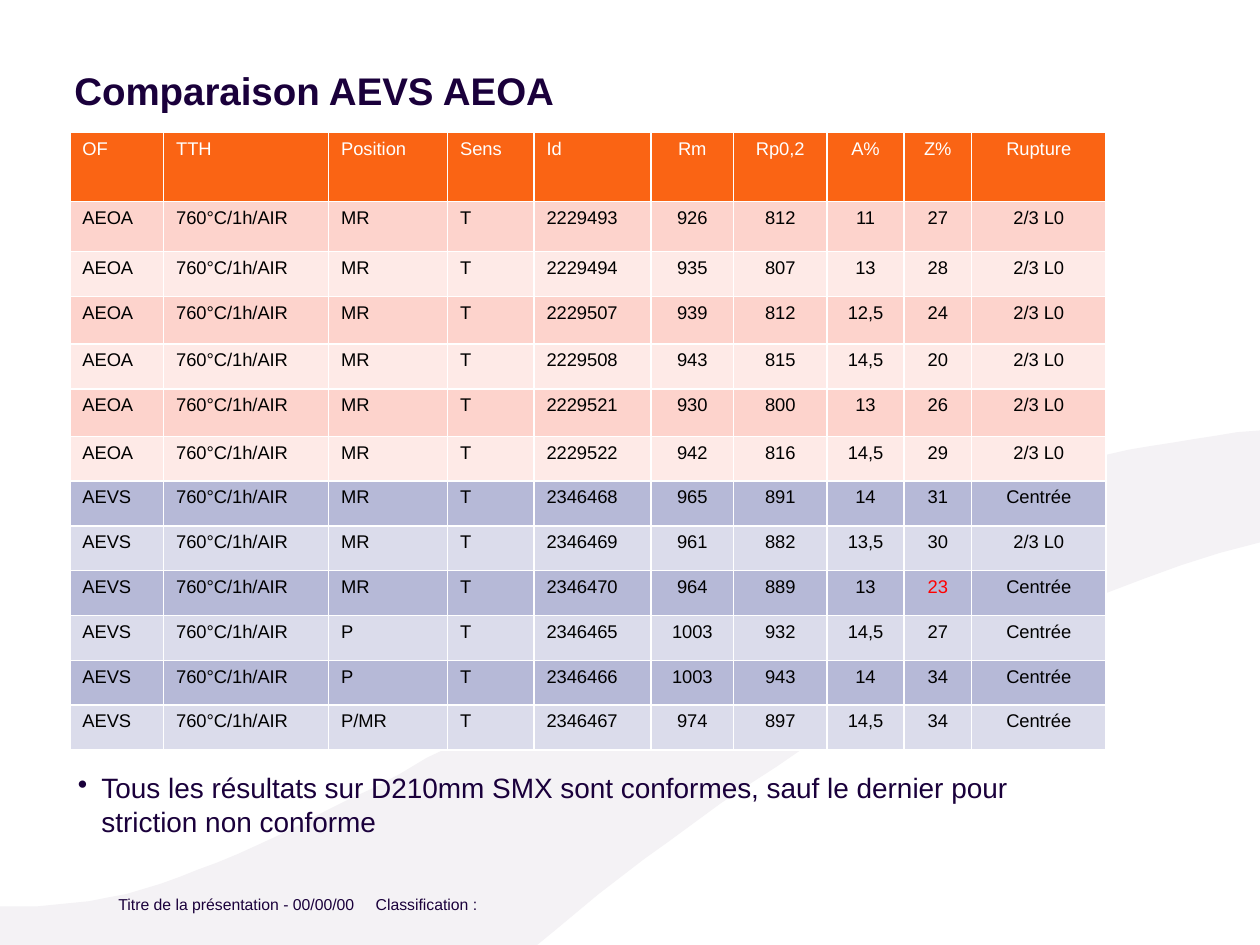
from lxml import etree
from pptx import Presentation
from pptx import util as u
from pptx.dml.color import RGBColor
from pptx.enum import text
from pptx.oxml import ns

Pt = u.Pt
DARK = "1A003B"


def color(value):
    return RGBColor.from_string(value)


def add_text(slide, left, top, width, height, content, size, anchor, margins=(0, 0)):
    """Add a wrapped text box; return its paragraph."""
    shape = slide.shapes.add_textbox(Pt(left), Pt(top), Pt(width), Pt(height))
    frame = shape.text_frame
    frame.word_wrap = True
    frame.vertical_anchor = anchor
    frame.margin_left = frame.margin_right = Pt(margins[0])
    frame.margin_top = frame.margin_bottom = Pt(margins[1])
    paragraph = frame.paragraphs[0]
    paragraph.text = content
    properties = paragraph._p.get_or_add_pPr()
    if content.startswith("Tous"):
        properties.set("marL", str(Pt(13.5)))
        properties.set("indent", str(-Pt(13.5)))
        etree.SubElement(properties, ns.qn("a:buChar")).set("char", "•")
    if "\t" in content:
        tabs = etree.SubElement(properties, ns.qn("a:tabLst"))
        tab = etree.SubElement(tabs, ns.qn("a:tab"))
        tab.set("pos", str(Pt(147)))
        tab.set("algn", "l")
    paragraph.font.name = "Arial"
    paragraph.font.size = Pt(size)
    paragraph.font.color.rgb = color(DARK)
    return paragraph


presentation = Presentation()
presentation.slide_width, presentation.slide_height = Pt(720), Pt(540)
slide = presentation.slides.add_slide(presentation.slide_layouts[6])

# Background wave: Bézier curves sampled into short segments
upper_left = [[(422, 338.4), (374.4, 363.6), (333.4, 385.9), (296.6, 405.4)],
              [(296.6, 405.4), (146.9, 486), (85.7, 520.6), (0, 518.4)]]
lower_right = [[(306.7, 540), (393.1, 468), (537.8, 360), (720, 309.6)]]
upper_right = [[(720, 246.2), (619.2, 255.6), (519.1, 286.6), (422, 338.4)]]
outline = []
for curves in (upper_left, [[(0, 540)] * 4], lower_right, upper_right):
    for curve in curves:
        for step in range(25):
            t = step / 24
            weights = ((1 - t) ** 3, 3 * t * (1 - t) ** 2, 3 * t * t * (1 - t), t ** 3)
            outline.append(tuple(sum(w * point[axis] for w, point in zip(weights, curve))
                                 for axis in (0, 1)))
builder = slide.shapes.build_freeform(*outline[0], scale=Pt(1))
builder.add_line_segments(outline[1:], close=True)
wave = builder.convert_to_shape()
wave.shadow.inherit = False
wave.fill.solid()
wave.fill.fore_color.rgb = color("F4F2F5")
wave.line.fill.background()

# Title and footer
title = add_text(slide, 42.5, 0, 635, 65.5, "Comparaison AEVS AEOA", 22,
                 text.MSO_ANCHOR.BOTTOM)
title.font.bold = True
title.line_spacing = 0.95
footer = add_text(slide, 67.7, 487.4, 269.3, 34.6,
                  "Titre de la présentation - 00/00/00\tClassification :", 9,
                  text.MSO_ANCHOR.BOTTOM)
footer.line_spacing = 0.9

# Results: position, id, Rm, Rp0,2, A%, Z%, rupture
results = {
    "AEOA": [
        ("MR", "2229493", "926", "812", "11", "27", "2/3 L0"),
        ("MR", "2229494", "935", "807", "13", "28", "2/3 L0"),
        ("MR", "2229507", "939", "812", "12,5", "24", "2/3 L0"),
        ("MR", "2229508", "943", "815", "14,5", "20", "2/3 L0"),
        ("MR", "2229521", "930", "800", "13", "26", "2/3 L0"),
        ("MR", "2229522", "942", "816", "14,5", "29", "2/3 L0"),
    ],
    "AEVS": [
        ("MR", "2346468", "965", "891", "14", "31", "Centrée"),
        ("MR", "2346469", "961", "882", "13,5", "30", "2/3 L0"),
        ("MR", "2346470", "964", "889", "13", "23", "Centrée"),
        ("P", "2346465", "1003", "932", "14,5", "27", "Centrée"),
        ("P", "2346466", "1003", "943", "14", "34", "Centrée"),
        ("P/MR", "2346467", "974", "897", "14,5", "34", "Centrée"),
    ],
}
bands = {"AEOA": ("FDD3CC", "FEEAE7"), "AEVS": ("B6B9D7", "DBDCEB")}
headers = ("OF", "TTH", "Position", "Sens", "Id", "Rm", "Rp0,2", "A%", "Z%", "Rupture")
rows = [(headers, "FA6414")]
for order, samples in results.items():
    for index, (position, *values) in enumerate(samples):
        rows.append(((order, "760°C/1h/AIR", position, "T", *values),
                     bands[order][index % 2]))

# Table
column_widths = (53.6, 94.3, 68, 49.4, 66.9, 47.2, 53.4, 44, 38.6, 76.9)
row_heights = [39.4, 28.6, 25.7, 27.1, 25.7, 27.1] + [25.6] * 7
table = slide.shapes.add_table(len(rows), len(headers), Pt(39.9), Pt(75.8),
                               Pt(sum(column_widths)), Pt(sum(row_heights))).table
for column, width in zip(table.columns, column_widths):
    column.width = Pt(width)
for row_index, (values, fill) in enumerate(rows):
    table.rows[row_index].height = Pt(row_heights[row_index])
    for column_index, value in enumerate(values):
        cell = table.cell(row_index, column_index)
        # White borders
        properties = cell._tc.get_or_add_tcPr()
        for side in "LRTB":
            border = etree.SubElement(properties, ns.qn(f"a:ln{side}"))
            border.set("w", str(Pt(1)))
            paint = etree.SubElement(border, ns.qn("a:solidFill"))
            etree.SubElement(paint, ns.qn("a:srgbClr")).set("val", "FFFFFF")
        cell.fill.solid()
        cell.fill.fore_color.rgb = color(fill)
        paragraph = cell.text_frame.paragraphs[0]
        paragraph.text = value
        if column_index >= headers.index("Rm"):
            paragraph.alignment = text.PP_ALIGN.CENTER
        low_reduction = headers[column_index] == "Z%" and value == "23"
        ink = "FFFFFF" if row_index == 0 else "FF0000" if low_reduction else "000000"
        paragraph.font.name = "Arial"
        paragraph.font.size = Pt(10.5)
        paragraph.font.bold = False
        paragraph.font.color.rgb = color(ink)

# Conclusion
add_text(slide, 37.4, 437, 594.7, 46,
         "Tous les résultats sur D210mm SMX sont conformes, sauf le dernier pour "
         "striction non conforme", 16, text.MSO_ANCHOR.TOP, (7.2, 3.6))

presentation.save("out.pptx")
